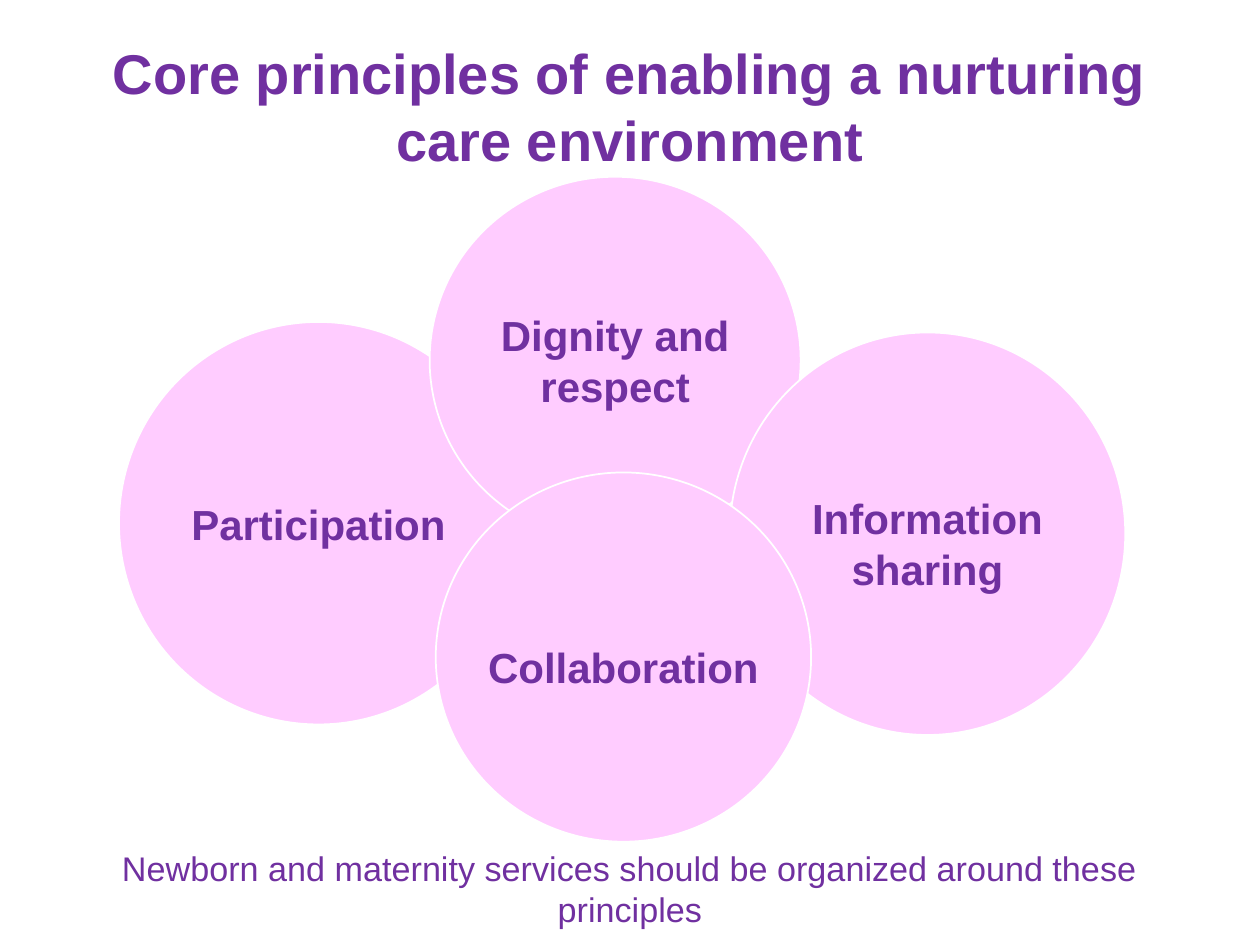
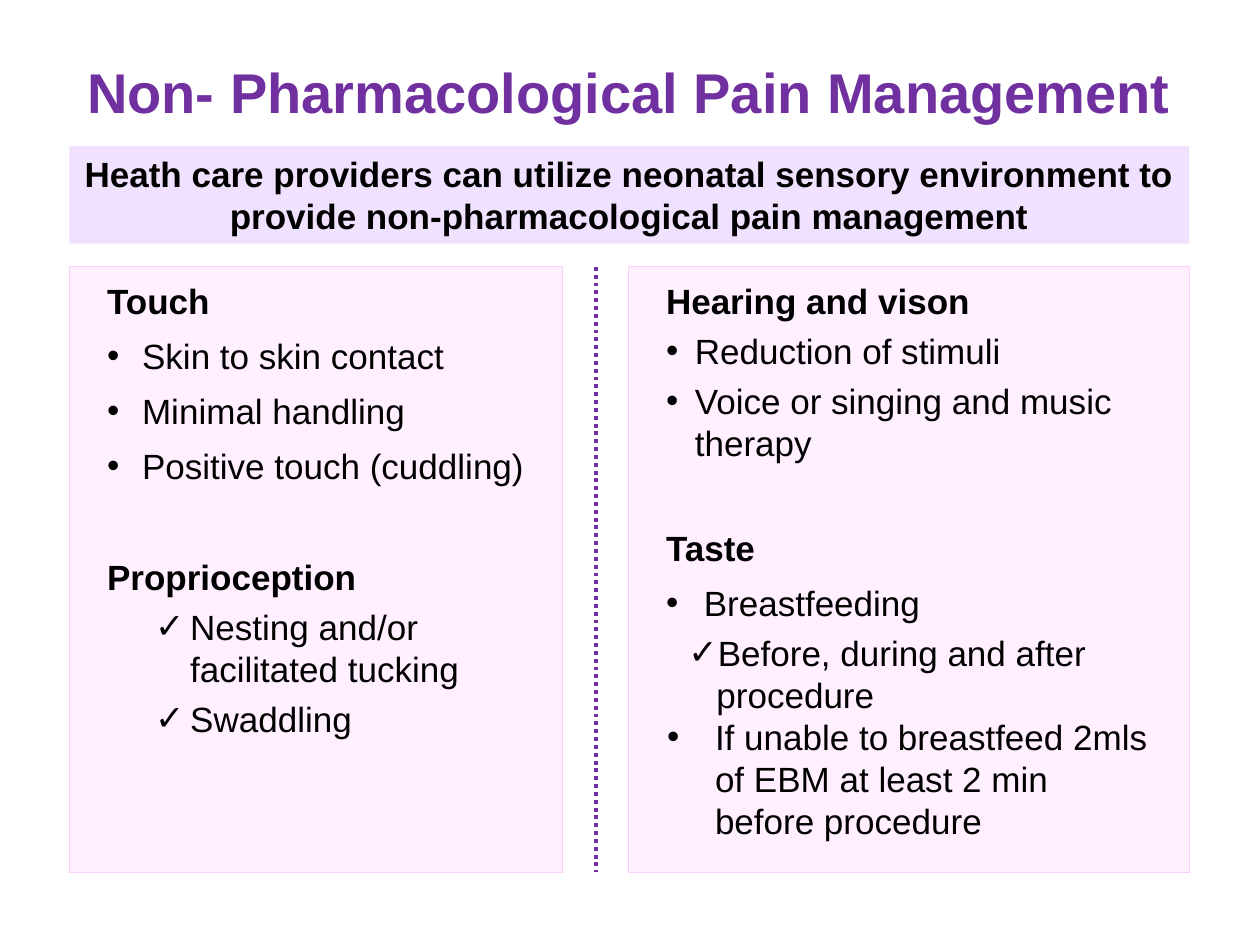
from dataclasses import dataclass
from typing import Optional

from lxml import etree
from pptx import Presentation
from pptx.dml.color import RGBColor
from pptx.enum.dml import MSO_LINE
from pptx.enum.shapes import MSO_CONNECTOR, MSO_SHAPE
from pptx.enum.text import MSO_ANCHOR, PP_ALIGN
from pptx.oxml.ns import qn
from pptx.util import Pt

CENTER, LEFT = PP_ALIGN.CENTER, PP_ALIGN.LEFT
TOP, MIDDLE, BOTTOM = MSO_ANCHOR.TOP, MSO_ANCHOR.MIDDLE, MSO_ANCHOR.BOTTOM
OVAL, RECTANGLE = MSO_SHAPE.OVAL, MSO_SHAPE.RECTANGLE
STRAIGHT, DOTTED = MSO_CONNECTOR.STRAIGHT, MSO_LINE.ROUND_DOT


@dataclass(frozen=True)
class Theme:
    font: str = "Arial"
    purple: str = "7030A0"
    pink: str = "FFCCFF"
    pale_pink: str = "FFEFFF"
    lilac: str = "F0E1FF"
    white: str = "FFFFFF"
    black: str = "000000"
    title_size: float = 32
    circle_size: float = 24
    body_size: float = 20
    note_size: float = 19.5


@dataclass(frozen=True)
class Box:
    left: float
    top: float
    width: float
    height: float


@dataclass(frozen=True)
class Circle:
    label: str
    box: Box
    top_inset: float = 0


@dataclass(frozen=True)
class Entry:
    text: str
    before: float = 7.5
    bullet: str = ""
    margin: float = 0
    hanging: float = 0


@dataclass(frozen=True)
class Panel:
    box: Box
    entries: list[Entry]


THEME = Theme()
DOT, CHECK = "•", "✓"
TITLE_INSETS = (5, 3, 5, 3)
PANEL_INSETS = (21.6, 7.2, 21.6, 3)
BAND_INSETS = (7.2, 3.6, 7.2, 3.6)

CIRCLES = [
    Circle("Participation", Box(68, 184, 228, 230)),
    Circle("Dignity and respect", Box(245.5, 101, 212, 209.5)),
    Circle("Information sharing", Box(417, 190, 226, 230), 11),
    Circle("Collaboration", Box(249, 270, 214.5, 211), 11),
]

CONTENT_LEFT, CONTENT_WIDTH = 39.6, 640
PANEL_TOP, PANEL_HEIGHT = 152.5, 346
DIVIDER_X = 340.5
PANELS = [
    Panel(Box(CONTENT_LEFT, PANEL_TOP, 282, PANEL_HEIGHT), [
        Entry("Touch", 0),
        Entry("Skin to skin contact", 7.5, DOT, 20, 20),
        Entry("Minimal handling", 7.5, DOT, 20, 20),
        Entry("Positive touch (cuddling)", 7.5, DOT, 20, 20),
        Entry("Proprioception", 39),
        Entry("Nesting and/or facilitated tucking", 4.5, CHECK, 47.5, 20),
        Entry("Swaddling", 4.5, CHECK, 47.5, 20),
    ]),
    Panel(Box(359, PANEL_TOP, 320.6, PANEL_HEIGHT), [
        Entry("Hearing and vison", 0),
        Entry("Reduction of stimuli", 4.5, DOT, 16.5, 16.5),
        Entry("Voice or singing and music therapy", 4.5, DOT, 16.5, 16.5),
        Entry("Taste", 36),
        Entry("Breastfeeding", 7.5, DOT, 21.6, 21.6),
        Entry("Before, during and after procedure", 4.5, CHECK, 28.8, 16),
        Entry("If unable to breastfeed 2mls of EBM at least 2 min before procedure",
              0, DOT, 28, 27.4),
    ]),
]


def color(value: str) -> RGBColor:
    return RGBColor.from_string(value)


def set_frame(frame, insets: tuple, anchor) -> None:
    frame.word_wrap = True
    frame.vertical_anchor = anchor
    (frame.margin_left, frame.margin_top,
     frame.margin_right, frame.margin_bottom) = map(Pt, insets)


def write(paragraph, text: str, size: float, ink: str, bold: bool, align) -> None:
    paragraph.text = text
    paragraph.alignment = align
    for run in paragraph.runs:
        run.font.name = THEME.font
        run.font.size = Pt(size)
        run.font.bold = bold
        run.font.color.rgb = color(ink)


def add_text(slide, box: Box, text: str, size: float, bold: bool, anchor=TOP):
    shape = slide.shapes.add_textbox(Pt(box.left), Pt(box.top), Pt(box.width), Pt(box.height))
    set_frame(shape.text_frame, TITLE_INSETS, anchor)
    paragraph = shape.text_frame.paragraphs[0]
    write(paragraph, text, size, THEME.purple, bold, CENTER)
    return paragraph


def add_filled(slide, kind, box: Box, fill: str, line: Optional[str] = None, width: float = 1):
    shape = slide.shapes.add_shape(kind, Pt(box.left), Pt(box.top), Pt(box.width), Pt(box.height))
    shape.shadow.inherit = False
    shape.fill.solid()
    shape.fill.fore_color.rgb = color(fill)
    if line is None:
        shape.line.fill.background()
    else:
        shape.line.color.rgb = color(line)
        shape.line.width = Pt(width)
    return shape


def add_circle(slide, circle: Circle) -> None:
    frame = add_filled(slide, OVAL, circle.box, THEME.pink, THEME.white).text_frame
    set_frame(frame, (0, circle.top_inset, 0, 0), MIDDLE)
    frame.word_wrap = " " in circle.label
    write(frame.paragraphs[0], circle.label, THEME.circle_size, THEME.purple, True, CENTER)


def set_bullet(paragraph, entry: Entry) -> None:
    properties = paragraph._p.get_or_add_pPr()
    properties.set("marL", str(Pt(entry.margin)))
    properties.set("indent", str(-Pt(entry.hanging)))
    bullet_color = etree.SubElement(properties, qn("a:buClr"))
    etree.SubElement(bullet_color, qn("a:srgbClr"), val=THEME.black)
    etree.SubElement(properties, qn("a:buFont"), typeface=THEME.font)
    etree.SubElement(properties, qn("a:buChar"), char=entry.bullet)


def add_panel(slide, panel: Panel) -> None:
    frame = add_filled(slide, RECTANGLE, panel.box, THEME.pale_pink, THEME.pink, 0.75).text_frame
    set_frame(frame, PANEL_INSETS, TOP)
    for index, entry in enumerate(panel.entries):
        paragraph = frame.add_paragraph() if index else frame.paragraphs[0]
        if entry.bullet:
            set_bullet(paragraph, entry)
        paragraph.space_before = Pt(entry.before)
        write(paragraph, entry.text, THEME.body_size, THEME.black, not entry.bullet, LEFT)


def add_divider(slide) -> None:
    divider = slide.shapes.add_connector(
        STRAIGHT, Pt(DIVIDER_X), Pt(PANEL_TOP), Pt(DIVIDER_X), Pt(PANEL_TOP + PANEL_HEIGHT))
    divider.line.color.rgb = color(THEME.purple)
    divider.line.width = Pt(2.25)
    divider.line.dash_style = DOTTED
    etree.SubElement(divider._element.spPr, qn("a:effectLst"))


def build_principles(slide) -> None:
    add_text(slide, Box(33, 19, 654, 83),
             "Core principles of enabling a nurturing care environment", THEME.title_size, True)
    add_text(slide, Box(24, 481, 672, 53),
             "Newborn and maternity services should be organized around these principles",
             THEME.note_size, False)
    for circle in CIRCLES:
        add_circle(slide, circle)


def build_pain_management(slide) -> None:
    title = add_text(slide, Box(CONTENT_LEFT, 32, CONTENT_WIDTH, 43),
                     "Non- Pharmacological Pain Management", THEME.title_size, True, BOTTOM)
    title.line_spacing = 0.9
    for panel in PANELS:
        add_panel(slide, panel)
    add_divider(slide)
    band = add_filled(slide, RECTANGLE, Box(CONTENT_LEFT, 83.5, CONTENT_WIDTH, 55.7), THEME.lilac)
    set_frame(band.text_frame, BAND_INSETS, TOP)
    write(band.text_frame.paragraphs[0],
          "Heath care providers can utilize neonatal sensory environment to provide "
          "non-pharmacological pain management",
          THEME.body_size, THEME.black, True, CENTER)


def main() -> None:
    presentation = Presentation()
    presentation.slide_width, presentation.slide_height = Pt(720), Pt(540)
    for build in (build_principles, build_pain_management):
        build(presentation.slides.add_slide(presentation.slide_layouts[6]))
    presentation.save("out.pptx")


if __name__ == "__main__":
    main()
